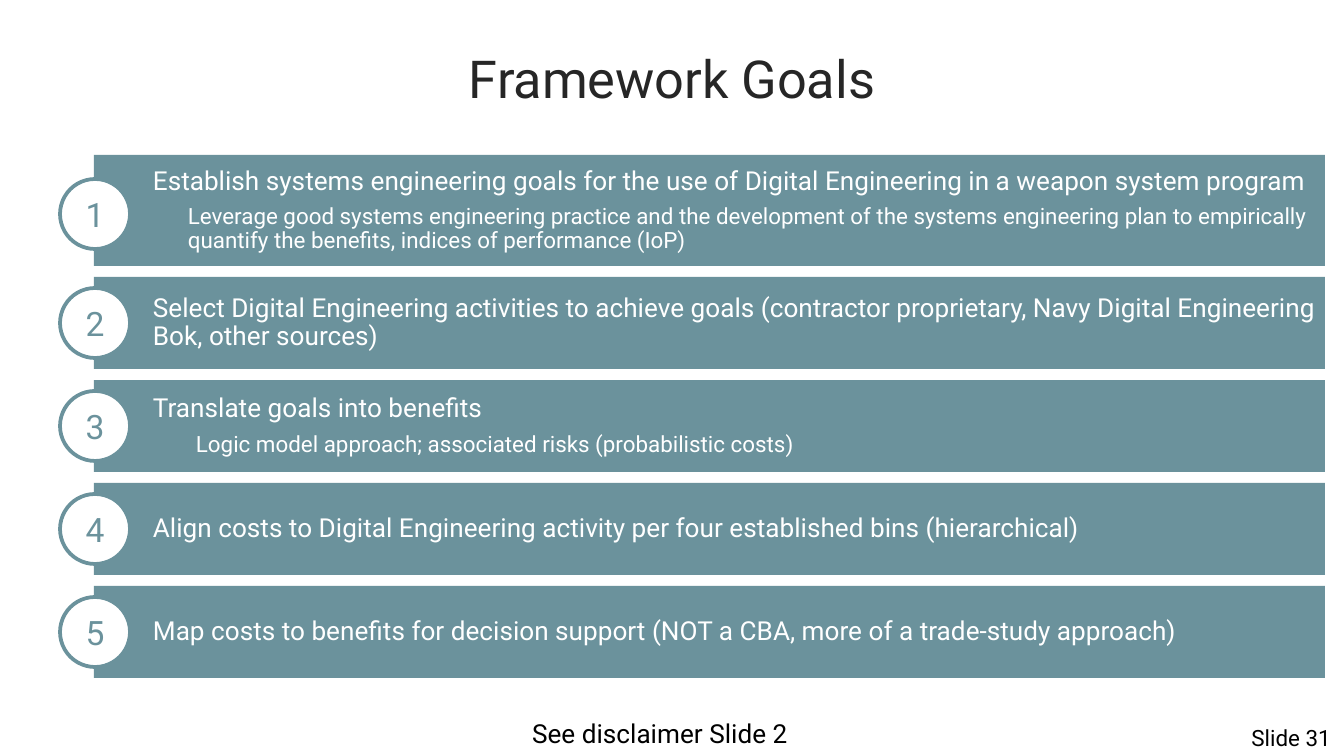
"""Build the Framework Goals slide with five numbered bars."""
from dataclasses import dataclass

from pptx import Presentation
from pptx import util as u
from pptx.dml.color import RGBColor
from pptx.enum import shapes, text

SCALE = 9144000 / 1344


def px(n):
    return u.Emu(round(n * SCALE))


@dataclass(frozen=True)
class Theme:
    font: str = "Roboto"
    teal: str = "6B929C"
    white: str = "FFFFFF"
    ink: str = "262626"
    black: str = "000000"
    title: int = 28
    badge: int = 18
    body: int = 14
    small: int = 12


class Deck:
    def __init__(self, theme):
        self.theme = theme
        self.prs = Presentation()
        self.prs.slide_width, self.prs.slide_height = px(1344), px(756)
        self.slide = self.prs.slides.add_slide(self.prs.slide_layouts[6])

    def style(self, para, words, size, color, align):
        para.text = words
        para.alignment = align
        para.font.name = self.theme.font
        para.font.size = u.Pt(size)
        para.font.color.rgb = RGBColor.from_string(color)

    def label(self, box, words, size, color, align, anchor=text.MSO_ANCHOR.TOP):
        frame = self.slide.shapes.add_textbox(*map(px, box)).text_frame
        frame.word_wrap = True
        frame.vertical_anchor = anchor
        self.style(frame.paragraphs[0], words, size, color, align)

    def shape(self, kind, box, fill):
        item = self.slide.shapes.add_shape(kind, *map(px, box))
        item.shadow.inherit = False
        item.fill.solid()
        item.fill.fore_color.rgb = RGBColor.from_string(fill)
        item.text_frame.vertical_anchor = text.MSO_ANCHOR.MIDDLE
        return item

    def bar(self, box, head, note, indent):
        t = self.theme
        item = self.shape(shapes.MSO_SHAPE.RECTANGLE, box, t.teal)
        item.line.fill.background()
        frame = item.text_frame
        frame.word_wrap = True
        frame.margin_left = px(59)
        frame.margin_right = frame.margin_top = frame.margin_bottom = px(4)
        first = frame.paragraphs[0]
        self.style(first, head, t.body, t.white, text.PP_ALIGN.LEFT)
        first.line_spacing = 0.9
        if note:
            first.space_after = u.Pt(5)
            para = frame.add_paragraph()
            self.style(para, note, t.small, t.white, text.PP_ALIGN.LEFT)
            para.line_spacing = 0.9
            props = para._p.get_or_add_pPr()
            props.set("marL", str(px(indent)))
            props.set("indent", "0")

    def badge(self, box, number):
        t = self.theme
        item = self.shape(shapes.MSO_SHAPE.OVAL, box, t.white)
        item.line.color.rgb = RGBColor.from_string(t.teal)
        item.line.width = u.Pt(2)
        self.style(item.text_frame.paragraphs[0], str(number), t.badge, t.teal,
                   text.PP_ALIGN.CENTER)


GOALS = [
    ("Establish systems engineering goals for the use of Digital Engineering in a weapon system program",
     "Leverage good systems engineering practice and the development of the systems engineering plan "
     "to empirically quantify the benefits, indices of performance (IoP)", 35, 111, 4),
    ("Select Digital Engineering activities to achieve goals (contractor proprietary, "
     "Navy Digital Engineering Bok, other sources)", "", 0, 92, 0),
    ("Translate goals into benefits",
     "Logic model approach; associated risks (probabilistic costs)", 43, 92, 0),
    ("Align costs to Digital Engineering activity per four established bins (hierarchical)",
     "", 0, 92, 0),
    ("Map costs to benefits for decision support (NOT a CBA, more of a trade-study approach)",
     "", 0, 92, 0),
]


def main():
    theme = Theme()
    deck = Deck(theme)
    align = text.PP_ALIGN
    deck.label((735, 718, 609, 40), "Slide 31", theme.small, theme.black, align.RIGHT)
    deck.label((382, 711, 556, 46), "See disclaimer Slide 2", theme.body, theme.black, align.CENTER)
    deck.label((67, 0, 1210, 156), "Framework Goals", theme.title, theme.ink, align.CENTER,
               text.MSO_ANCHOR.MIDDLE)
    top, gap, size = 155, 11, 70
    for number, (head, note, indent, high, drop) in enumerate(GOALS, 1):
        deck.bar((94, top, 1231, high), head, note, indent)
        deck.badge((60, top + (high - size) // 2 + drop, size, size), number)
        top += high + gap
    deck.prs.save("out.pptx")


if __name__ == "__main__":
    main()
